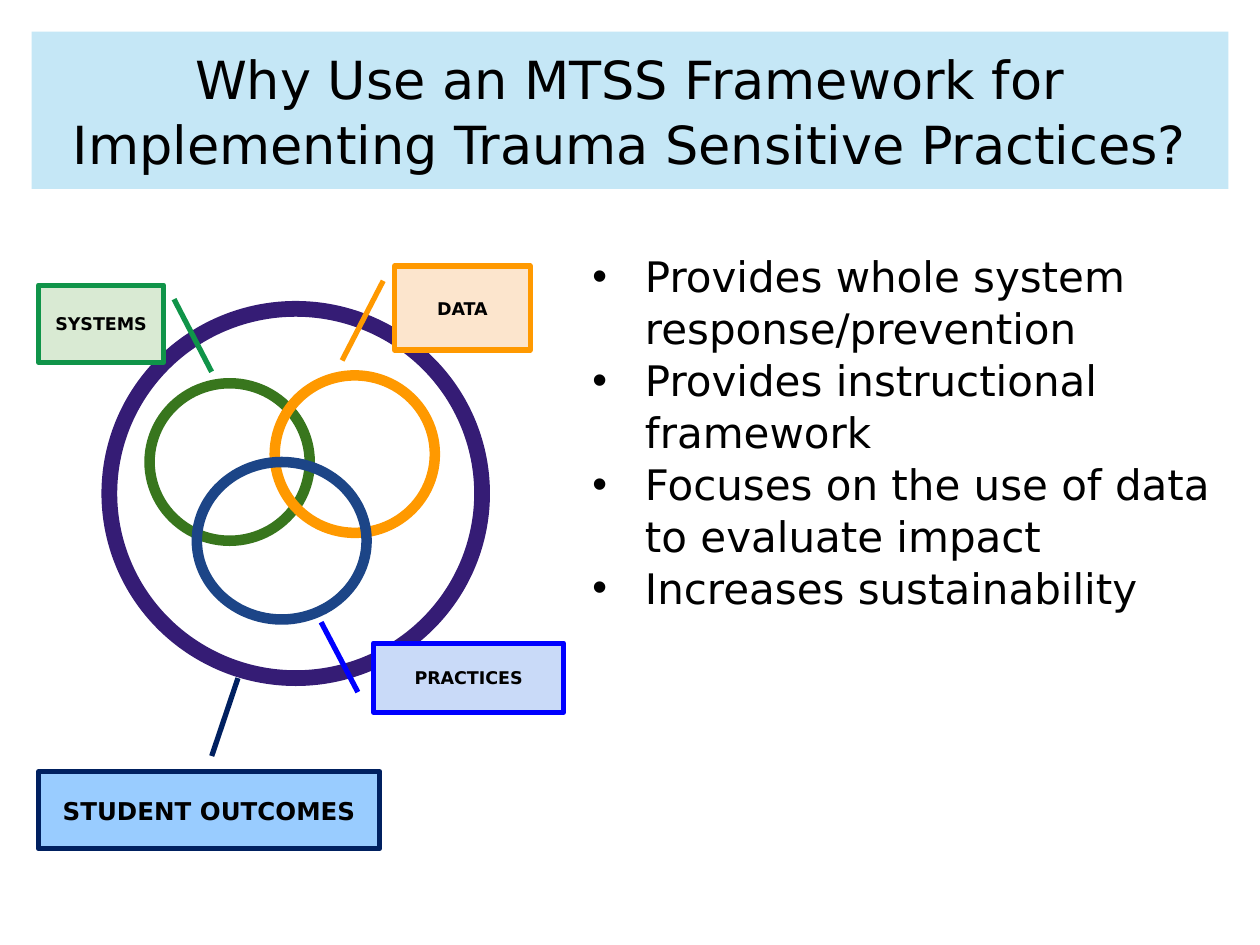
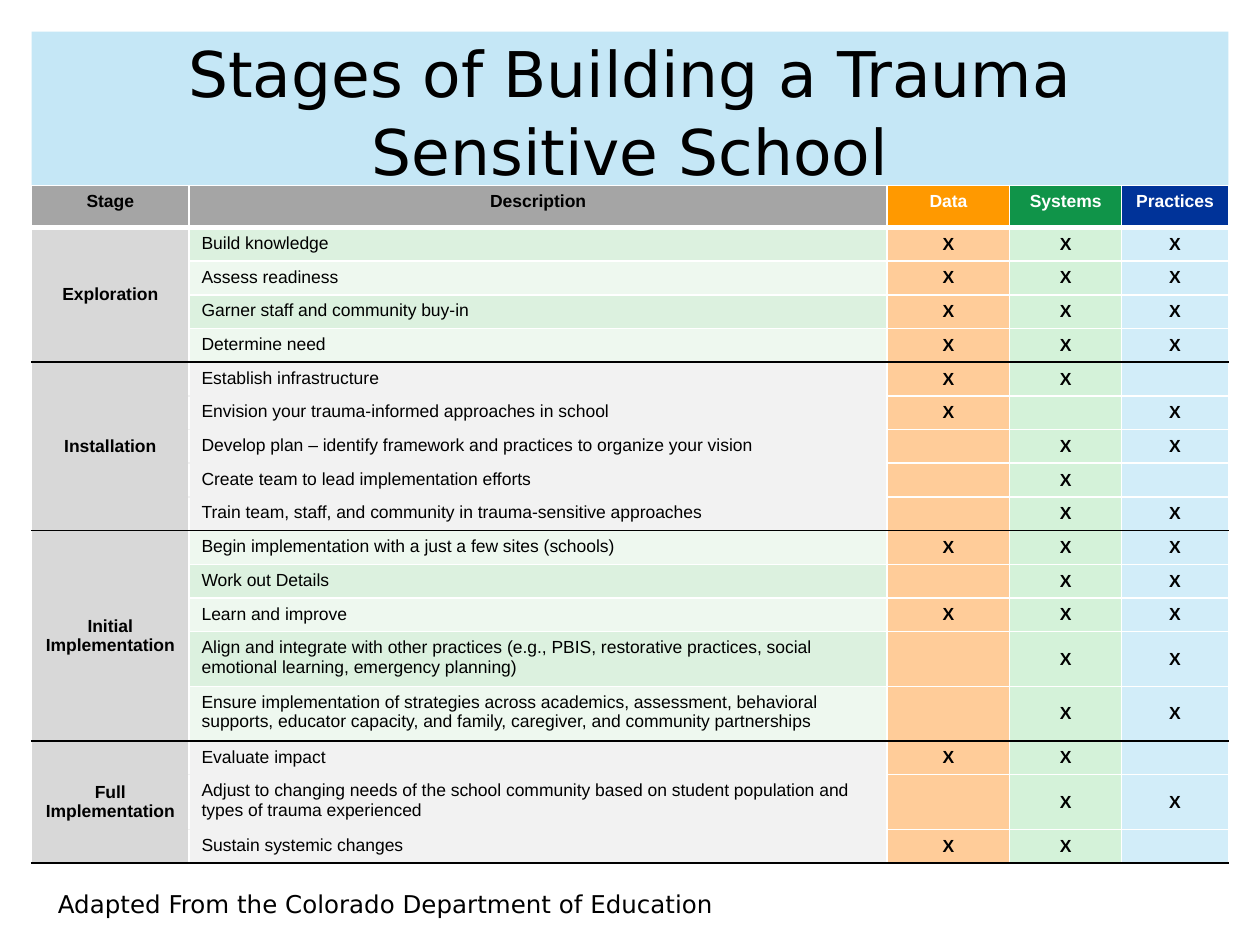
from dataclasses import dataclass

from lxml import etree
from pptx import Presentation
from pptx.dml.color import RGBColor
from pptx.enum import shapes, text
from pptx.oxml import ns
from pptx.util import Pt


# Theme shared by both slides
@dataclass(frozen=True)
class Theme:
    heading_font: str = "DejaVu Sans"
    table_font: str = "Arial"
    ink: str = "000000"
    white: str = "FFFFFF"
    band: str = "A9DCF2"
    band_alpha: int = 67000
    stage: str = "D8D8D8"
    greens: tuple = ("EEF8EF", "DCF1DF")
    grey: str = "F2F2F2"
    bullet_size: int = 24
    note_size: int = 14
    small_size: int = 10
    leading: float = 1.03


T = Theme()
TITLE_BAND = (18, 18, 684, 90)

# Slide 1 content
WHY_TITLE = ("Why Use an MTSS Framework for Implementing Trauma Sensitive Practices?", 30)
REASONS = [
    "Provides whole system response/prevention",
    "Provides instructional framework",
    "Focuses on the use of data to evaluate impact",
    "Increases sustainability",
]
REASONS_BOX = (325.5, 139, 381.5, 262)
# box, colour, line width
RINGS = [
    ((85.5, 219, 91.5, 90), "38761D", 6),
    ((157, 214.5, 91.5, 90), "FF9900", 6),
    ((62.5, 176.5, 213, 211), "351C75", 9),
    ((112.5, 264, 97, 90), "1C4587", 6),
]
# label, box, fill, line, text size, pointer start, pointer end
CALLOUTS = [
    ("SYSTEMS", (22, 163, 71.5, 44), "D9EAD3", "109449", 10, (99.5, 171), (121, 212.5)),
    ("DATA", (225.5, 152, 77.5, 48), "FCE5CD", "FF9900", 10, (219, 160.5), (195.5, 206)),
    ("PRACTICES", (213.5, 367.5, 108.5, 39.5), "C9DAF8", "0000FF", 10, (204.5, 395.5), (183.5, 355.5)),
    ("STUDENT OUTCOMES", (22, 441, 195, 44), "99CCFF", "002060", 14, (121, 432), (136, 387.5)),
]

# Slide 2 content
STAGES_TITLE = ("Stages of Building a Trauma Sensitive School", 36)
CREDIT = "Adapted From the Colorado Department of Education"
CREDIT_BOX = (26, 504.5, 485, 24.5)
# heading, width, heading fill, heading colour
COLUMNS = [
    ("Stage", 90, "A5A5A5", T.ink),
    ("Description", 399, "A5A5A5", T.ink),
    ("Data", 70, "FF9900", T.white),
    ("Systems", 64, "109449", T.white),
    ("Practices", 61, "003399", T.white),
]
MARK_FILLS = {"D": "FFCC99", "S": "D4F2D9", "P": "D2EDF9"}
# stage, whether its rows are green, steps with the areas they touch
STAGES = [
    ("Exploration", True, [
        ("Build knowledge", "DSP"),
        ("Assess readiness", "DSP"),
        ("Garner staff and community buy-in", "DSP"),
        ("Determine need", "DSP"),
    ]),
    ("Installation", False, [
        ("Establish infrastructure", "DS"),
        ("Envision your trauma-informed approaches in school", "DP"),
        ("Develop plan – identify framework and practices to organize your vision", "SP"),
        ("Create team to lead implementation efforts", "S"),
        ("Train team, staff, and community in trauma-sensitive approaches", "SP"),
    ]),
    ("Initial Implementation", True, [
        ("Begin implementation with a just a few sites (schools)", "DSP"),
        ("Work out Details", "SP"),
        ("Learn and improve", "DSP"),
        ("Align and integrate with other practices (e.g., PBIS, restorative practices, "
         "social emotional learning, emergency planning)", "SP"),
        ("Ensure implementation of strategies across academics, assessment, behavioral supports, "
         "educator capacity, and family, caregiver, and community partnerships", "SP"),
    ]),
    ("Full Implementation", False, [
        ("Evaluate impact", "DS"),
        ("Adjust to changing needs of the school community based on student population "
         "and types of trauma experienced", "SP"),
        ("Sustain systemic changes", "DS"),
    ]),
]
TABLE_AT = (18, 106)
HEAD_HEIGHT, ROW_HEIGHT, TALL_HEIGHT = 24, 19.25, 31
CHARS_PER_LINE = 90


# Shared helpers
def rgb(code):
    return RGBColor.from_string(code)


def points(values):
    return [Pt(v) for v in values]


def style(paragraph, size, color=T.ink, font=T.heading_font, bold=False, align=None):
    paragraph.alignment = align
    for run in paragraph.runs:
        run.font.name = font
        run.font.size = Pt(size)
        run.font.bold = bold
        run.font.color.rgb = rgb(color)


def add_solid_fill(parent, color):
    solid = etree.SubElement(parent, ns.qn("a:solidFill"))
    return etree.SubElement(solid, ns.qn("a:srgbClr"), val=color)


def add_titled_slide(prs, wording, size):
    slide = prs.slides.add_slide(prs.slide_layouts[5])
    title = slide.shapes.title
    title.left, title.top, title.width, title.height = points(TITLE_BAND)
    title.fill.solid()
    title.fill.fore_color.rgb = rgb(T.band)
    band_color = title.fill._xPr.find(".//" + ns.qn("a:srgbClr"))
    etree.SubElement(band_color, ns.qn("a:alpha"), val=str(T.band_alpha))
    frame = title.text_frame
    frame.text = wording
    frame.auto_size = text.MSO_AUTO_SIZE.NONE
    frame.vertical_anchor = text.MSO_ANCHOR.MIDDLE
    style(frame.paragraphs[0], size, align=text.PP_ALIGN.CENTER)
    frame.paragraphs[0].line_spacing = T.leading
    return slide


def add_text(slide, box, lines, size):
    frame = slide.shapes.add_textbox(*points(box)).text_frame
    frame.word_wrap = True
    frame.text = "\n".join(lines)
    for paragraph in frame.paragraphs:
        style(paragraph, size)
    return frame


def add_outlined(slide, kind, box, line, width):
    shape = slide.shapes.add_shape(kind, *points(box))
    shape.shadow.inherit = False
    shape.line.color.rgb = rgb(line)
    shape.line.width = Pt(width)
    shape.fill.background()
    return shape


# Slide 1: rings with callouts, and the reasons
def add_callout(slide, label, box, fill, line, size, start, end):
    callout = add_outlined(slide, shapes.MSO_SHAPE.LINE_CALLOUT_1, box, line, 3)
    callout.fill.solid()
    callout.fill.fore_color.rgb = rgb(fill)
    left, top, width, height = box
    for i, (x, y) in enumerate((start, end)):
        callout.adjustments[2 * i] = (y - top) / height
        callout.adjustments[2 * i + 1] = (x - left) / width
    frame = callout.text_frame
    frame.text = label
    frame.vertical_anchor = text.MSO_ANCHOR.MIDDLE
    frame.margin_top = frame.margin_bottom = Pt(7.2)
    style(frame.paragraphs[0], size, bold=True, align=text.PP_ALIGN.CENTER)


def build_why(prs):
    slide = add_titled_slide(prs, *WHY_TITLE)
    for box, line, width in RINGS:
        add_outlined(slide, shapes.MSO_SHAPE.OVAL, box, line, width)
    for callout in CALLOUTS:
        add_callout(slide, *callout)
    reasons = add_text(slide, REASONS_BOX, REASONS, T.bullet_size)
    for paragraph in reasons.paragraphs:
        paragraph.line_spacing = T.leading
        props = paragraph._p.get_or_add_pPr()
        props.set("marL", str(Pt(36)))
        props.set("indent", str(Pt(-30)))
        etree.SubElement(props, ns.qn("a:buFont"), typeface="Arial")
        etree.SubElement(props, ns.qn("a:buChar"), char="•")


# Slide 2: table of stages
def fill_cell(cell, wording, fill, top, bottom, color=T.ink, bold=True, centred=True, middle=True):
    """Set text, edges and fill; top and bottom are (colour, width)."""
    cell.text = wording
    cell.margin_top = cell.margin_bottom = Pt(3.6)
    cell.vertical_anchor = text.MSO_ANCHOR.MIDDLE if middle else text.MSO_ANCHOR.TOP
    paragraph = cell.text_frame.paragraphs[0]
    style(paragraph, T.small_size, color, T.table_font, bold,
          text.PP_ALIGN.CENTER if centred else text.PP_ALIGN.LEFT)
    if not wording:
        paragraph._p.get_or_add_endParaRPr().set("sz", str(T.small_size * 100))
    props = cell._tc.get_or_add_tcPr()
    side = (T.white, 1)
    for tag, (edge, width) in zip(("lnL", "lnR", "lnT", "lnB"), (side, side, top, bottom)):
        add_solid_fill(etree.SubElement(props, ns.qn("a:" + tag), w=str(Pt(width))), edge)
    cell.fill.solid()
    cell.fill.fore_color.rgb = rgb(fill)


def build_stages(prs):
    slide = add_titled_slide(prs, *STAGES_TITLE)
    add_text(slide, CREDIT_BOX, [CREDIT], T.note_size)

    steps = [step for _, _, group in STAGES for step, _ in group]
    heights = [HEAD_HEIGHT] + [TALL_HEIGHT if len(s) > CHARS_PER_LINE else ROW_HEIGHT for s in steps]
    widths = [column[1] for column in COLUMNS]
    table = slide.shapes.add_table(len(heights), len(widths),
                                   *points((*TABLE_AT, sum(widths), sum(heights)))).table
    table.first_row = table.horz_banding = False
    for column, width in zip(table.columns, widths):
        column.width = Pt(width)
    for row, height in zip(table.rows, heights):
        row.height = Pt(height)

    thin, thick, rule, blend = (T.white, 1), (T.white, 3), (T.ink, 1), (T.grey, 1)
    for c, (heading, _, fill, color) in enumerate(COLUMNS):
        fill_cell(table.cell(0, c), heading, fill, thin, thick, color, middle=False)

    r = 1
    for stage, green, group in STAGES:
        first, last = r, r + len(group) - 1
        opening = thick if first == 1 else rule
        for step, marks in group:
            top = opening if r == first else thin
            bottom = rule if r == last else thin
            fill_cell(table.cell(r, 0), stage if r == first else "", T.stage, opening, rule)
            inner = thin if green else blend
            fill_cell(table.cell(r, 1), step, T.greens[r % 2] if green else T.grey,
                      opening if r == first else inner, rule if r == last else inner,
                      bold=False, centred=False, middle=False)
            for c, (area, fill) in enumerate(MARK_FILLS.items(), 2):
                fill_cell(table.cell(r, c), "X" if area in marks else "", fill, top, bottom)
            r += 1
        table.cell(first, 0).merge(table.cell(last, 0))


def main():
    prs = Presentation()
    prs.slide_width, prs.slide_height = Pt(720), Pt(540)
    build_why(prs)
    build_stages(prs)
    prs.save("out.pptx")


if __name__ == "__main__":
    main()
